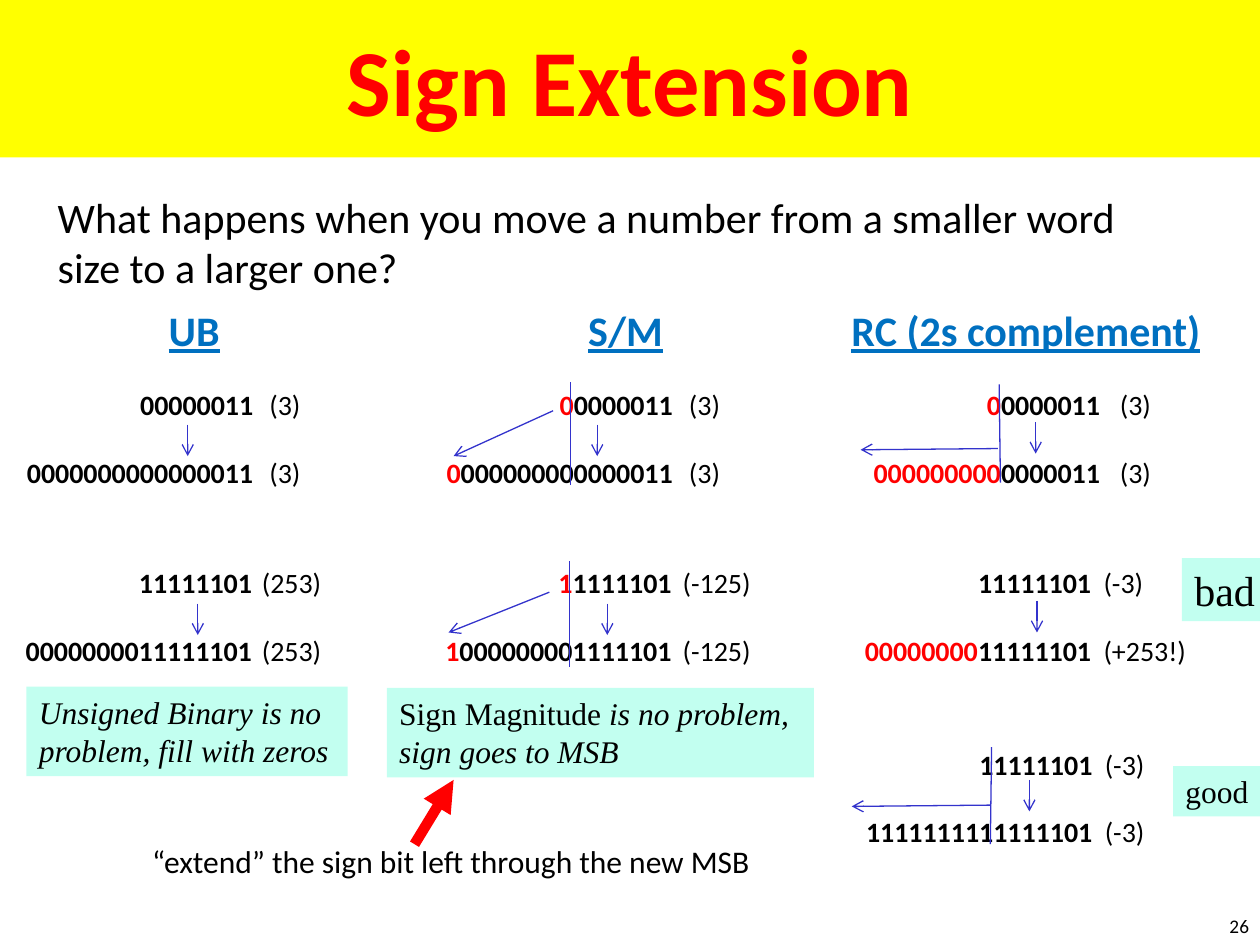
import pptx
import pptx.dml.color
import pptx.enum.shapes
import pptx.enum.text
import pptx.oxml.ns
import pptx.util
from lxml import etree
from pptx.util import Inches

COLORS = {
    "yellow": "FFFF00",
    "red": "FF0000",
    "black": "000000",
    "heading": "0070C0",
    "line": "3333CC",
    "mint": "C2FFF0",
}
SERIF = "Times New Roman"
ALIGN = pptx.enum.text.PP_ALIGN


def rgb(name):
    return pptx.dml.color.RGBColor.from_string(COLORS[name])


def add_run(paragraph, text, font="Calibri", size=16, color="black",
            bold=False, italic=False, underline=False):
    run = paragraph.add_run()
    run.text = text
    run.font.name = font
    run.font.size = pptx.util.Pt(size)
    run.font.color.rgb = rgb(color)
    run.font.bold = bold
    run.font.italic = italic
    run.font.underline = underline


class SlideBuilder:
    line_gap = pptx.util.Pt(19.5)

    def __init__(self, slide):
        self.slide = slide

    def fill_text(self, shape, lines, align=ALIGN.LEFT, wrap=False, fit=True, **style):
        """Fill a shape with lines, each a list of (text, style changes) runs."""
        frame = shape.text_frame
        frame.word_wrap = wrap
        if fit:
            frame.auto_size = pptx.enum.text.MSO_AUTO_SIZE.SHAPE_TO_FIT_TEXT
        for index, runs in enumerate(lines):
            paragraph = frame.add_paragraph() if index else frame.paragraphs[0]
            paragraph.alignment = align
            if index:
                paragraph.space_before = self.line_gap
            for text, changes in runs:
                if text:
                    add_run(paragraph, text, **{**style, **changes})

    def text(self, box, lines, **style):
        shape = self.slide.shapes.add_textbox(*map(Inches, box))
        self.fill_text(shape, lines, **style)

    def panel(self, box, runs, fill="mint", anchor=pptx.enum.text.MSO_ANCHOR.TOP, **style):
        shape = self.slide.shapes.add_shape(
            pptx.enum.shapes.MSO_SHAPE.RECTANGLE, *map(Inches, box))
        shape.shadow.inherit = False
        shape.fill.solid()
        shape.fill.fore_color.rgb = rgb(fill)
        shape.line.fill.background()
        shape.text_frame.vertical_anchor = anchor
        self.fill_text(shape, [runs], **style)

    def line(self, start, end, head=None, color="line", width=0.75):
        connector = self.slide.shapes.add_connector(
            pptx.enum.shapes.MSO_CONNECTOR.STRAIGHT, *map(Inches, start + end))
        connector.line.color.rgb = rgb(color)
        connector.line.width = pptx.util.Pt(width)
        qname = pptx.oxml.ns.qn
        properties = connector._element.spPr
        if head:
            outline = properties.find(qname("a:ln"))
            etree.SubElement(outline, qname("a:tailEnd"), type=head)
        etree.SubElement(properties, qname("a:effectLst"))

    def number_pair(self, left, top, numbers, value_left, value_width, values):
        """Stack a short and a long word, each (red part, black part), and their values."""
        words = [[(red, {"color": "red"}), (black, {})] for red, black in numbers]
        self.text((left, top, 2.03, 0.91), words, align=ALIGN.RIGHT, bold=True)
        self.text((value_left, top, value_width, 0.91),
                  [[(value, {})] for value in values])


def main():
    presentation = pptx.Presentation()
    presentation.slide_width = Inches(10)
    presentation.slide_height = Inches(7.5)
    builder = SlideBuilder(presentation.slides.add_slide(presentation.slide_layouts[6]))

    builder.panel((0, 0, 10, 1.25), [("Sign Extension", {})], fill="yellow",
                  anchor=pptx.enum.text.MSO_ANCHOR.MIDDLE, align=ALIGN.CENTER,
                  wrap=True, fit=False, size=54, color="red", bold=True)
    question = "What happens when you move a number from a smaller word size to a larger one?"
    builder.text((0.36, 1.47, 8.83, 0.88), [[(question, {})]],
                 wrap=True, fit=False, size=24)

    for left, width, heading in [
        (1.24, 0.61, "UB"),
        (4.57, 0.8, "S/M"),
        (6.66, 3, "RC (2s complement)"),
    ]:
        builder.text((left, 2.37, width, 0.5), [[(heading, {})]],
                     size=24, color="heading", bold=True, underline=True)

    first, second, third = 3.03, 4.44, 5.88
    for pair in [
        (0.08, first, [("", "00000011"), ("", "0000000000000011")],
         2.04, 0.47, ["(3)", "(3)"]),
        (0.07, second, [("", "11111101"), ("", "0000000011111101")],
         1.98, 0.69, ["(253)", "(253)"]),
        (3.41, first, [("0", "0000011"), ("0", "000000000000011")],
         5.37, 0.47, ["(3)", "(3)"]),
        (3.4, second, [("1", "1111101"), ("1", "000000001111101")],
         5.32, 0.77, ["(-125)", "(-125)"]),
        (6.8, first, [("0", "0000011"), ("000000000", "0000011")],
         8.79, 0.47, ["(3)", "(3)"]),
        (6.73, second, [("", "11111101"), ("00000000", "11111101")],
         8.66, 0.89, ["(-3)", "(+253!)"]),
        (6.74, third, [("", "11111101"), ("", "1111111111111101")],
         8.67, 0.54, ["(-3)", "(-3)"]),
    ]:
        builder.number_pair(*pair)

    for x, top in [(1.49, 3.37), (1.57, 4.79), (4.74, 3.37), (4.82, 4.79),
                   (8.17, 6.19), (8.22, 3.35), (8.23, 4.77)]:
        builder.line((x, top), (x, top + 0.25), head="arrow")
    for start, end in [
        ((4.39, 3.26), (3.6, 3.62)),
        ((4.36, 4.7), (3.56, 5.02)),
        ((7.86, 6.39), (6.76, 6.4)),
        ((7.92, 3.56), (6.83, 3.57)),
    ]:
        builder.line(start, end, head="arrow")
    for start, end in [
        ((4.53, 3.85), (4.53, 3.03)),
        ((4.52, 5.29), (4.52, 4.45)),
        ((7.86, 6.7), (7.87, 5.93)),
        ((7.94, 3.83), (7.93, 3.05)),
    ]:
        builder.line(start, end)

    builder.text((1.11, 6.63, 4.98, 0.4),
                 [[("“extend” the sign bit left through the new MSB", {})]], size=18)
    builder.panel((0.21, 5.45, 2.55, 0.71),
                  [("Unsigned Binary is no problem, fill with zeros", {})],
                  wrap=True, font=SERIF, size=18, italic=True)
    builder.panel((3.07, 5.46, 3.39, 0.71),
                  [("Sign Magnitude ", {}),
                   ("is no problem, sign goes to MSB", {"italic": True})],
                  wrap=True, font=SERIF, size=18)
    builder.line((3.29, 6.7), (3.6, 6.19), head="triangle", color="red", width=6)
    builder.text((9.66, 7.21, 0.36, 0.29), [[("26", {})]], size=11)
    builder.panel((9.38, 4.43, 0.69, 0.5), [("bad", {})], font=SERIF, size=24)
    builder.panel((9.31, 6.08, 0.71, 0.4), [("good", {})], font=SERIF, size=18)

    presentation.save("out.pptx")


if __name__ == "__main__":
    main()
